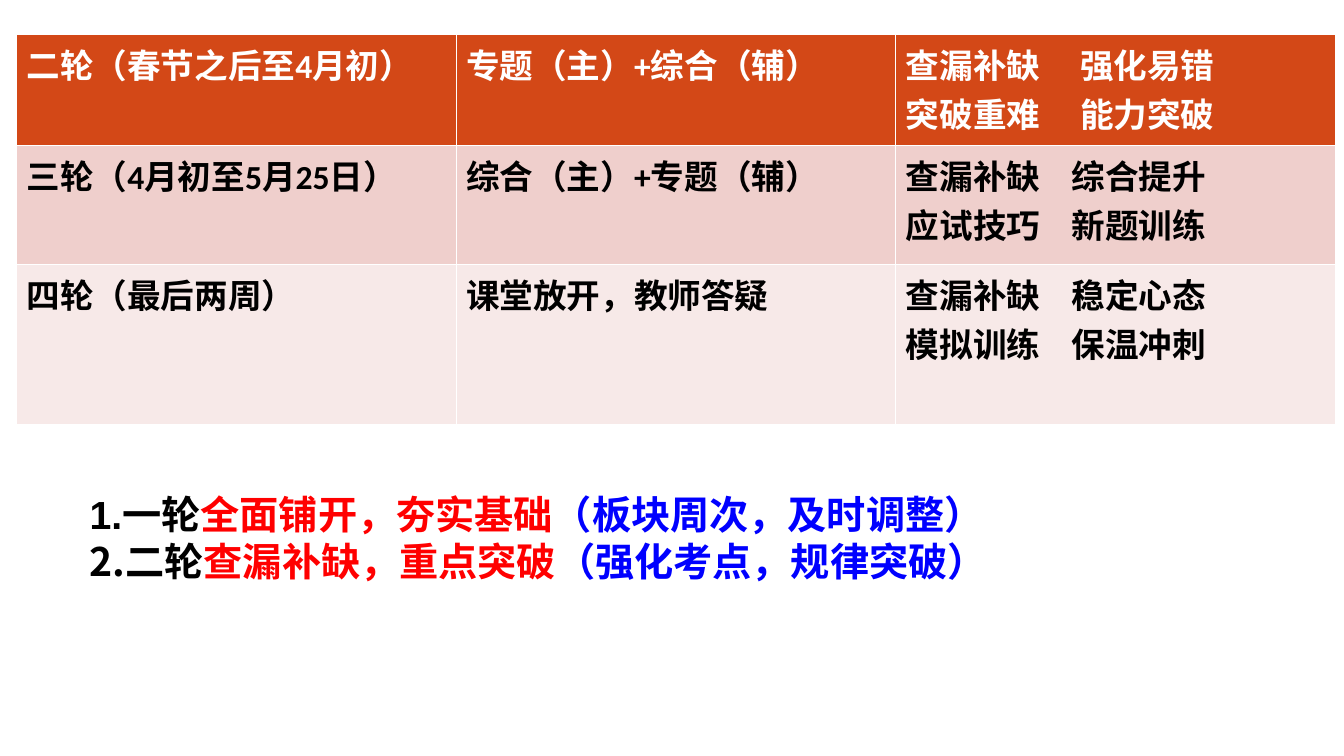
from lxml import etree
from pptx import Presentation
from pptx import util as u
from pptx.dml.color import RGBColor
from pptx.oxml.ns import qn

WHITE = RGBColor(0xFF, 0xFF, 0xFF)
BLACK = RGBColor(0, 0, 0)
RED = RGBColor(0xFF, 0, 0)
BLUE = RGBColor(0, 0, 0xFF)
ORANGE = RGBColor(0xD3, 0x48, 0x17)
ROSE = RGBColor(0xEF, 0xCF, 0xCC)
PALE_ROSE = RGBColor(0xF7, 0xE9, 0xE8)

# Each round: fill, text colour, tab position, cell texts
ROUNDS = [
    (ORANGE, WHITE, 124.5, ["二轮（春节之后至4月初）", "专题（主）+综合（辅）",
                            "查漏补缺\t强化易错\n突破重难\t能力突破"]),
    (ROSE, BLACK, 118.5, ["三轮（4月初至5月25日）", "综合（主）+专题（辅）",
                          "查漏补缺\t综合提升\n应试技巧\t新题训练"]),
    (PALE_ROSE, BLACK, 118.5, ["四轮（最后两周）", "课堂放开，教师答疑",
                               "查漏补缺\t稳定心态\n模拟训练\t保温冲刺"]),
]
ROW_HEIGHTS = [79.2, 85, 114.6]
COLUMN_WIDTH = 314.1

# Each summary line: runs of text, colour, font
SUMMARY = [
    [("1.", BLACK, "Arial"), ("一轮", BLACK, "Noto Sans CJK SC"),
     ("全面铺开，夯实基础", RED, "Noto Sans CJK SC"),
     ("（板块周次，及时调整）", BLUE, "Noto Sans CJK SC")],
    [("2.二轮", BLACK, "Noto Sans CJK SC"),
     ("查漏补缺，重点突破", RED, "Noto Sans CJK SC"),
     ("（强化考点，规律突破）", BLUE, "Noto Sans CJK SC")],
]


class SlideBuilder:
    table_font, table_size = "Calibri", 24
    summary_size, summary_leading = 28, 33.6

    def __init__(self, slide):
        self.slide = slide

    def add_tab(self, paragraph, position):
        properties = paragraph._p.get_or_add_pPr()
        tabs = etree.Element(qn("a:tabLst"))
        etree.SubElement(tabs, qn("a:tab"), pos=str(u.Pt(position)), algn="l")
        properties.insert(0, tabs)

    def fill_cell(self, cell, content, fill, color, tab):
        cell.fill.solid()
        cell.fill.fore_color.rgb = fill
        cell.text = content
        for paragraph in cell.text_frame.paragraphs:
            font = paragraph.font
            font.name, font.size, font.bold = self.table_font, u.Pt(self.table_size), True
            font.color.rgb = color
            if "\t" in content:
                self.add_tab(paragraph, tab)

    def add_schedule(self, left, top, rounds, heights, column_width):
        columns = len(rounds[0][3])
        schedule = self.slide.shapes.add_table(
            len(rounds), columns, u.Pt(left), u.Pt(top),
            u.Pt(column_width * columns), u.Pt(sum(heights))).table
        schedule.horz_banding = False
        for column in schedule.columns:
            column.width = u.Pt(column_width)
        for row, height, (fill, color, tab, contents) in zip(schedule.rows, heights, rounds):
            row.height = u.Pt(height)
            for cell, content in zip(row.cells, contents):
                self.fill_cell(cell, content, fill, color, tab)

    def add_summary(self, left, top, width, height, lines):
        frame = self.slide.shapes.add_textbox(
            u.Pt(left), u.Pt(top), u.Pt(width), u.Pt(height)).text_frame
        frame.word_wrap = True
        for index, line in enumerate(lines):
            paragraph = frame.add_paragraph() if index else frame.paragraphs[0]
            paragraph.line_spacing = u.Pt(self.summary_leading)
            paragraph.font.size, paragraph.font.bold = u.Pt(self.summary_size), True
            for content, color, font_name in line:
                run = paragraph.add_run()
                run.text = content
                run.font.name = font_name
                run.font.color.rgb = color


def main():
    deck = Presentation()
    deck.slide_width, deck.slide_height = u.Pt(960), u.Pt(540)
    builder = SlideBuilder(deck.slides.add_slide(deck.slide_layouts[6]))

    # Revision rounds
    builder.add_schedule(11.7, 24.8, ROUNDS, ROW_HEIGHTS, COLUMN_WIDTH)

    # Key points
    builder.add_summary(57, 347, 744, 108.7, SUMMARY)

    deck.save("out.pptx")


if __name__ == "__main__":
    main()
